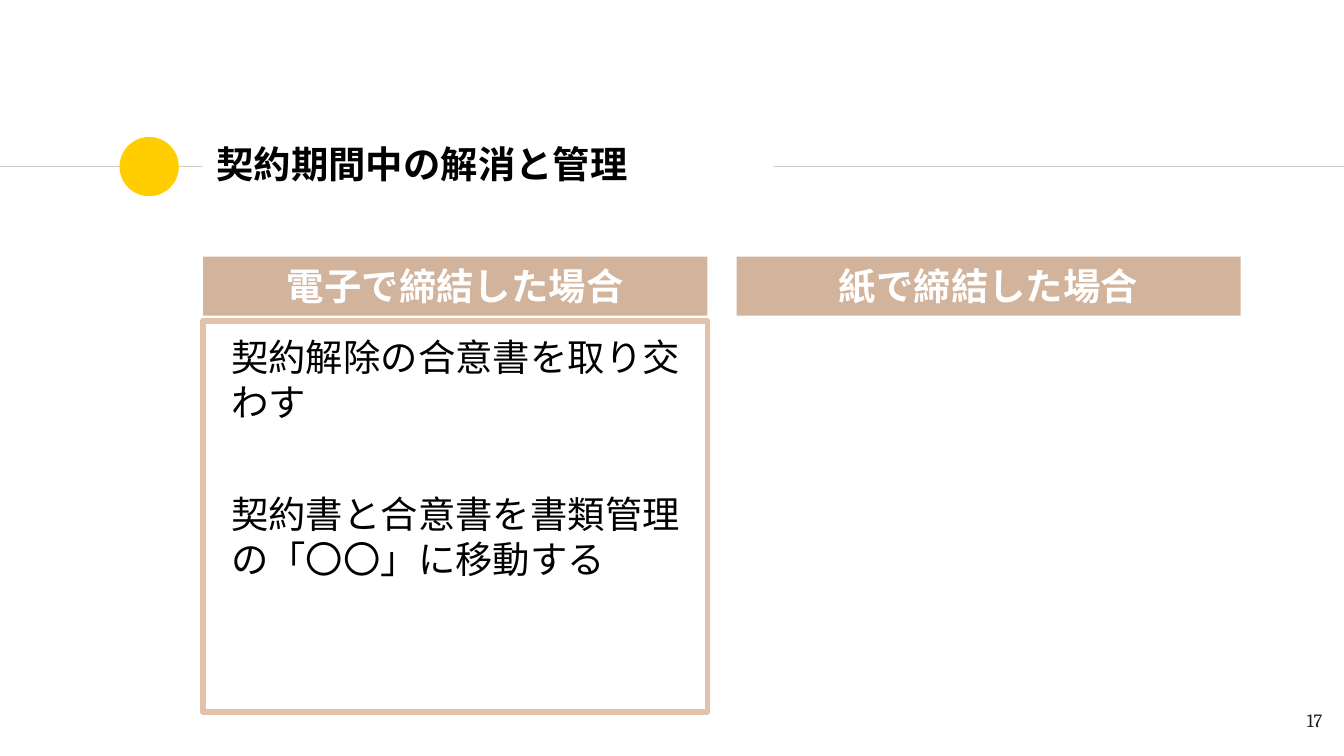
from lxml.etree import SubElement
from pptx import Presentation
from pptx.dml.color import RGBColor
from pptx.enum.shapes import MSO_CONNECTOR, MSO_SHAPE
from pptx.enum.text import MSO_ANCHOR as ANCHOR, MSO_AUTO_SIZE as AUTO, PP_ALIGN as ALIGN
from pptx.oxml.ns import qn
from pptx.util import Cm, Pt

COLORS = {"rule": "CCCCCC", "dot": "FFCD00", "header": "A7693A", "frame": "E2C2AA",
          "text": "000000", "number": "1D1D1B", "white": "FFFFFF"}
HEADING = {"size": Pt(20), "name": "Arial", "bold": True}
BODY = {"size": Pt(20), "name": "Lato"}
NUMBER = {"size": Pt(10), "name": "Cambria"}
WIDTH, HEIGHT = 25.4, 14.29


def rgb(key):
    """Return the named colour."""
    return RGBColor.from_string(COLORS[key])


def set_attrs(obj, **values):
    """Set several attributes on an object."""
    for name, value in values.items():
        setattr(obj, name, value)


def add_box(s, box, fill=None, line=None, shape=MSO_SHAPE.RECTANGLE):
    """Add a flat shape with an optional fill and outline."""
    sp = s.shapes.add_shape(shape, *map(Cm, box))
    sp.shadow.inherit = False
    if fill:
        sp.fill.solid()
        sp.fill.fore_color.rgb = rgb(fill)
    else:
        sp.fill.background()
    if line:
        sp.line.color.rgb = rgb(line)
        sp.line.width = Pt(3)
    else:
        sp.line.fill.background()
    return sp


def write(sp, lines, font, color, align=ALIGN.LEFT, anchor=ANCHOR.TOP, inset_y=0.25):
    """Write paragraphs in one font and return them."""
    tf = sp.text_frame
    set_attrs(tf, word_wrap=True, vertical_anchor=anchor,
              margin_left=Cm(0.25), margin_right=Cm(0.25),
              margin_top=Cm(inset_y), margin_bottom=Cm(inset_y))
    for i, line in enumerate(lines):
        p = tf.add_paragraph() if i else tf.paragraphs[0]
        p.alignment = align
        r = p.add_run()
        r.text = line
        set_attrs(r.font, **font)
        r.font.color.rgb = rgb(color)
    return tf.paragraphs


def add_rule(s, x1, x2, y):
    """Draw a thin horizontal rule."""
    line = s.shapes.add_connector(MSO_CONNECTOR.STRAIGHT, Cm(x1), Cm(y), Cm(x2), Cm(y))
    line.line.color.rgb = rgb("rule")
    line.line.width = Pt(0.75)
    SubElement(line._element.spPr, qn("a:effectLst"))


def add_title(s, box, title):
    """Place the title between two rules, with a dot on the left one."""
    x, y, w, h = box
    mid, dot = y + h / 2 + 0.05, 1.12
    add_rule(s, 0, x - 0.03, mid)
    add_box(s, (x - 1.58, mid - dot / 2, dot, dot), "dot", shape=MSO_SHAPE.OVAL)
    add_rule(s, x + w + 0.02, WIDTH, mid)
    tb = s.shapes.add_textbox(*map(Cm, box))
    write(tb, [title], HEADING, "text", anchor=ANCHOR.MIDDLE)


def add_column(s, box, header, steps):
    """Place a header bar and, if there are steps, a framed list below it."""
    x, y, w, h = box
    bar, gap = 1.12, 0.1
    if steps:
        frame = add_box(s, (x, y + bar + gap, w, h - bar - gap), line="frame")
        for i, p in enumerate(write(frame, steps, BODY, "text")):
            p.space_before = Pt(36 if i else 6)
            p._p.get_or_add_pPr().set("marL", str(Cm(0.28)))
    sp = add_box(s, (x, y, w, bar), "header")
    SubElement(sp._element.spPr.find(".//" + qn("a:srgbClr")), qn("a:alpha"), val="50000")
    write(sp, [header], HEADING, "white", ALIGN.CENTER, inset_y=0.13)
    sp.text_frame.auto_size = AUTO.SHAPE_TO_FIT_TEXT


def add_number(s, box, number):
    """Place the slide number."""
    tb = s.shapes.add_textbox(*map(Cm, box))
    write(tb, [number], NUMBER, "number", ALIGN.RIGHT)


def main():
    """Build the slide and save it."""
    prs = Presentation()
    set_attrs(prs, slide_width=Cm(WIDTH), slide_height=Cm(HEIGHT))
    s = prs.slides.add_slide(prs.slide_layouts[6])
    left, width, gap = 3.84, 9.53, 0.55
    columns = [
        ("電子で締結した場合", ["契約解除の合意書を取り交わす",
                       "契約書と合意書を書類管理の「〇〇」に移動する"]),
        ("紙で締結した場合", []),
    ]
    add_title(s, (left, 2.49, 10.77, 1.22), "契約期間中の解消と管理")
    for i, (header, steps) in enumerate(columns):
        add_column(s, (left + i * (width + gap), 4.85, width, 8.61), header, steps)
    add_number(s, (23.72, 13.18, 1.52, 1.09), "17")
    prs.save("out.pptx")


if __name__ == "__main__":
    main()
